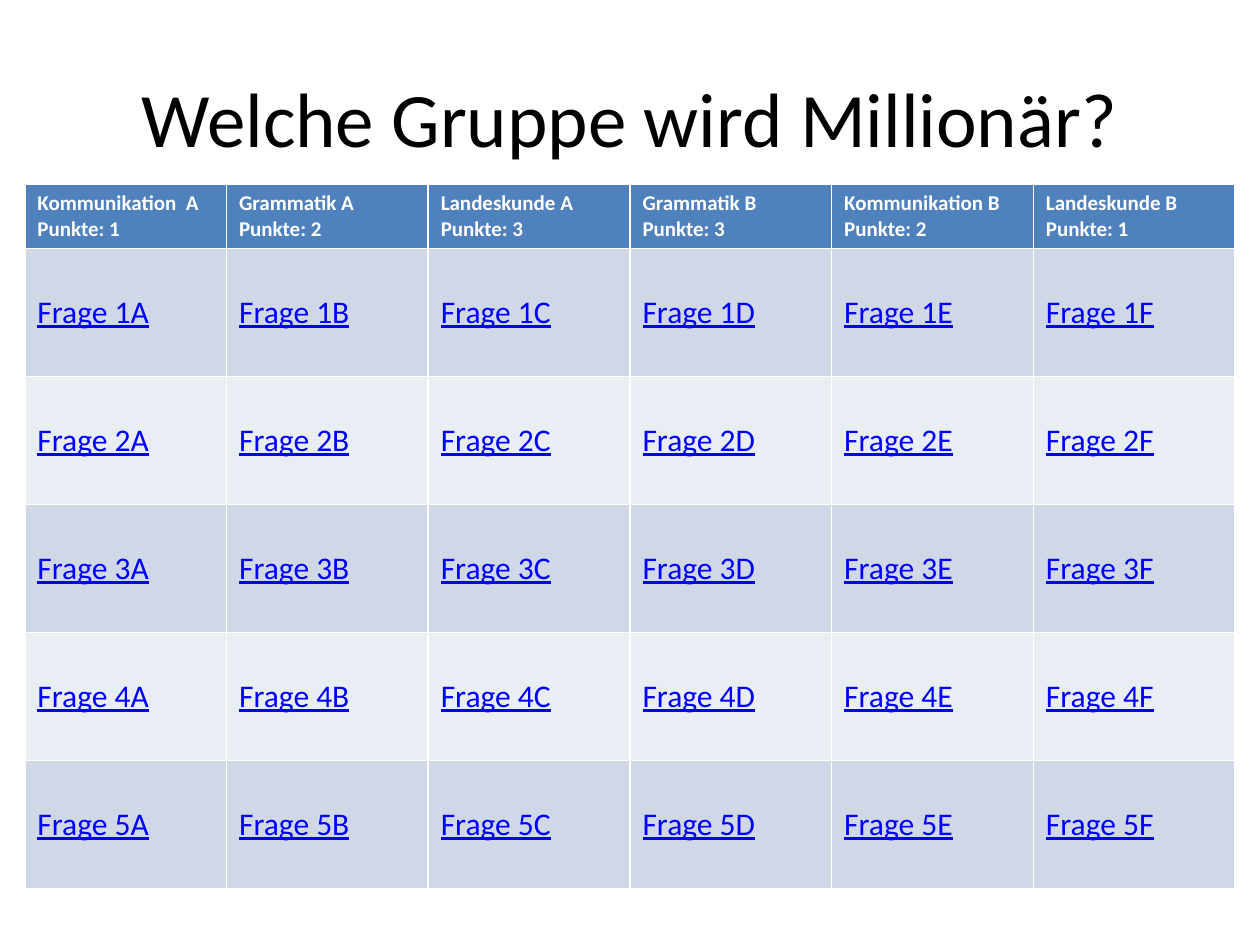
from pptx import Presentation
from pptx.dml.color import RGBColor
from pptx.enum.text import MSO_ANCHOR, PP_ALIGN
from pptx.util import Cm, Pt

MIDDLE = MSO_ANCHOR.MIDDLE
TOP = MSO_ANCHOR.TOP
CENTER = PP_ALIGN.CENTER
FONT = "Calibri"
COLORS = {
    "title": "000000",
    "header": "4F81BD",
    "header_text": "FFFFFF",
    "odd_row": "D0D8E8",
    "even_row": "E9EDF4",
    "question": "0000FF",
}
CATEGORIES = [
    ("Kommunikation  A", 1),
    ("Grammatik A", 2),
    ("Landeskunde A", 3),
    ("Grammatik B", 3),
    ("Kommunikation B", 2),
    ("Landeskunde B", 1),
]
QUESTION_ROWS = 5
HEADER_HEIGHT = Cm(1.29)


def format_text(frame, size, color, bold=False, underline=False):
    """Apply one font style to every run of a text frame."""
    for para in frame.paragraphs:
        for span in para.runs:
            span.font.name = FONT
            span.font.size = Pt(size)
            span.font.bold = bold
            span.font.underline = underline
            span.font.color.rgb = RGBColor.from_string(COLORS[color])


def add_title(page, left, top, width, height):
    """Place the centred heading in the given box."""
    frame = page.shapes.add_textbox(left, top, width, height).text_frame
    frame.word_wrap = True
    frame.vertical_anchor = MIDDLE
    frame.text = "Welche Gruppe wird Millionär?"
    frame.paragraphs[0].alignment = CENTER
    format_text(frame, 44, "title")


def fill_cell(cell, text, fill, anchor):
    """Set the text, background and anchor of a table cell."""
    cell.text_frame.text = text
    cell.vertical_anchor = anchor
    cell.fill.solid()
    cell.fill.fore_color.rgb = RGBColor.from_string(COLORS[fill])


def add_question_board(page, left, top, width, height):
    """Place the table of categories and numbered questions in the given box."""
    table = page.shapes.add_table(
        QUESTION_ROWS + 1, len(CATEGORIES), left, top, width, height
    ).table
    table.rows[0].height = HEADER_HEIGHT
    for number in range(1, QUESTION_ROWS + 1):
        table.rows[number].height = (height - HEADER_HEIGHT) // QUESTION_ROWS
    for column, (category, points) in enumerate(CATEGORIES):
        header = table.cell(0, column)
        fill_cell(header, f"{category}\nPunkte: {points}", "header", TOP)
        format_text(header.text_frame, 12, "header_text", bold=True)
        for number in range(1, QUESTION_ROWS + 1):
            cell = table.cell(number, column)
            fill = "odd_row" if number % 2 else "even_row"
            fill_cell(cell, f"Frage {number}{'ABCDEF'[column]}", fill, MIDDLE)
            format_text(cell.text_frame, 18, "question", underline=True)


def main():
    """Build and save the quiz overview slide."""
    deck = Presentation()
    deck.slide_width, deck.slide_height = Cm(25.4), Cm(19.05)
    page = deck.slides.add_slide(deck.slide_layouts[6])
    add_title(page, Cm(1.27), Cm(0.76), Cm(22.86), Cm(3.18))
    add_question_board(page, Cm(0.5), Cm(3.72), Cm(24.4), Cm(14.19))
    deck.save("out.pptx")


if __name__ == "__main__":
    main()
